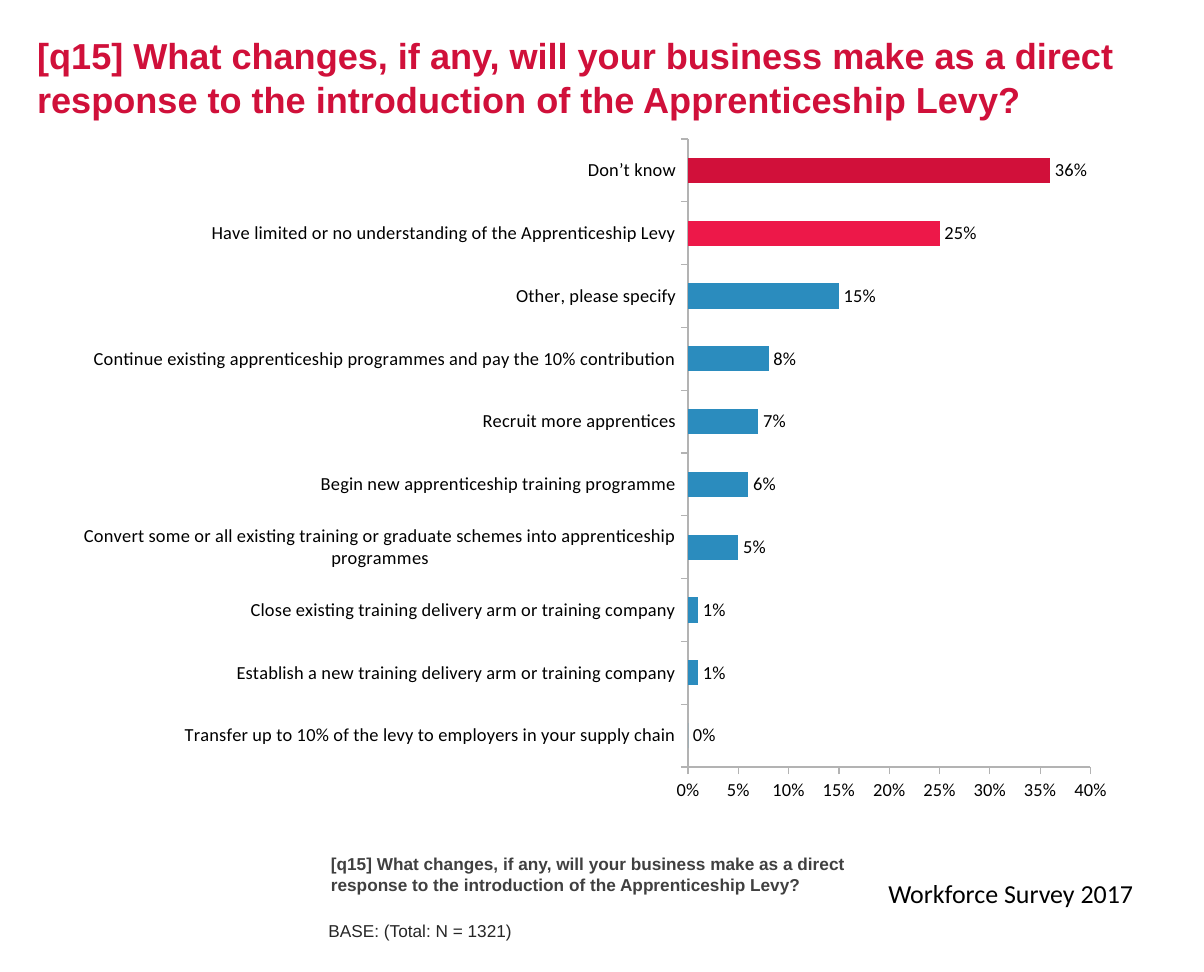
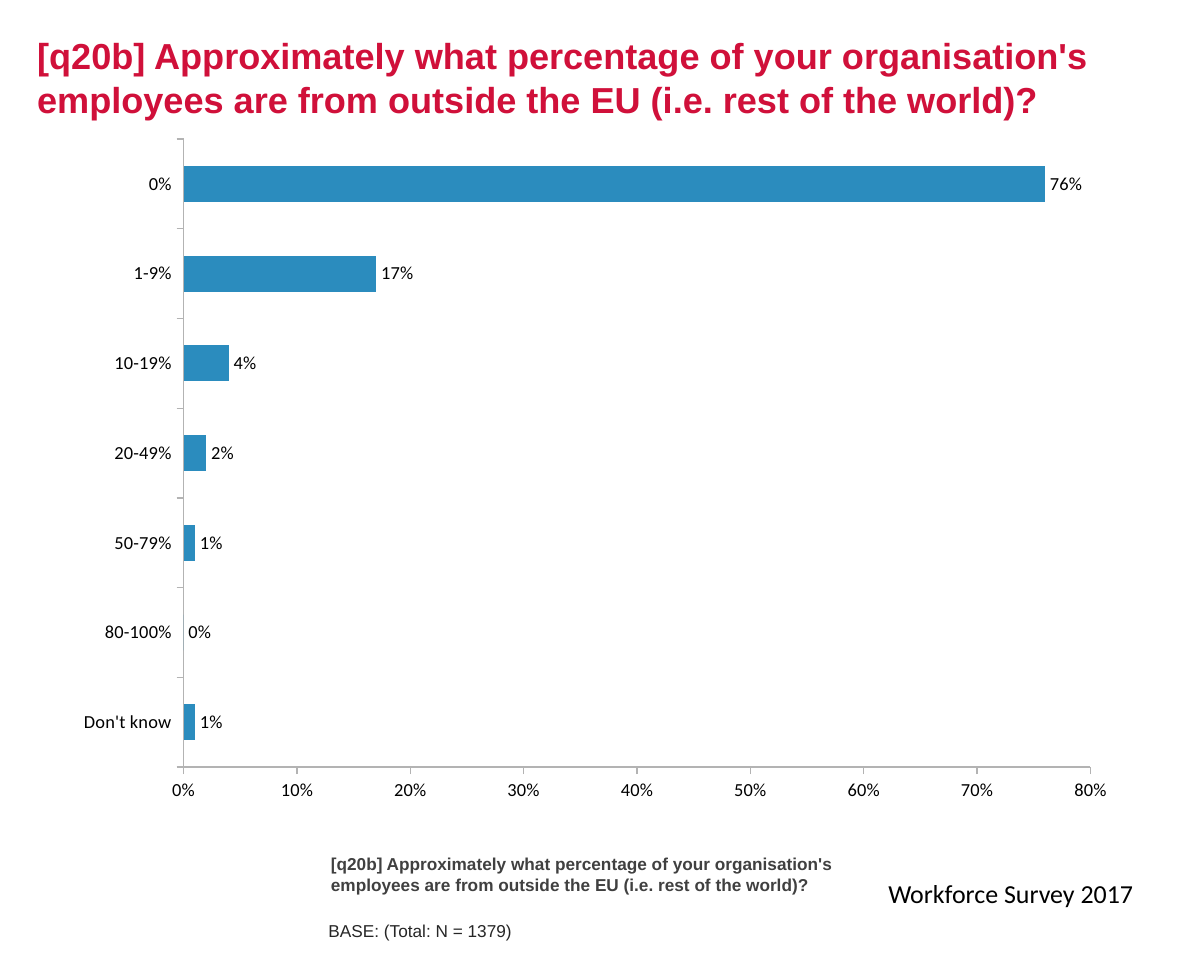
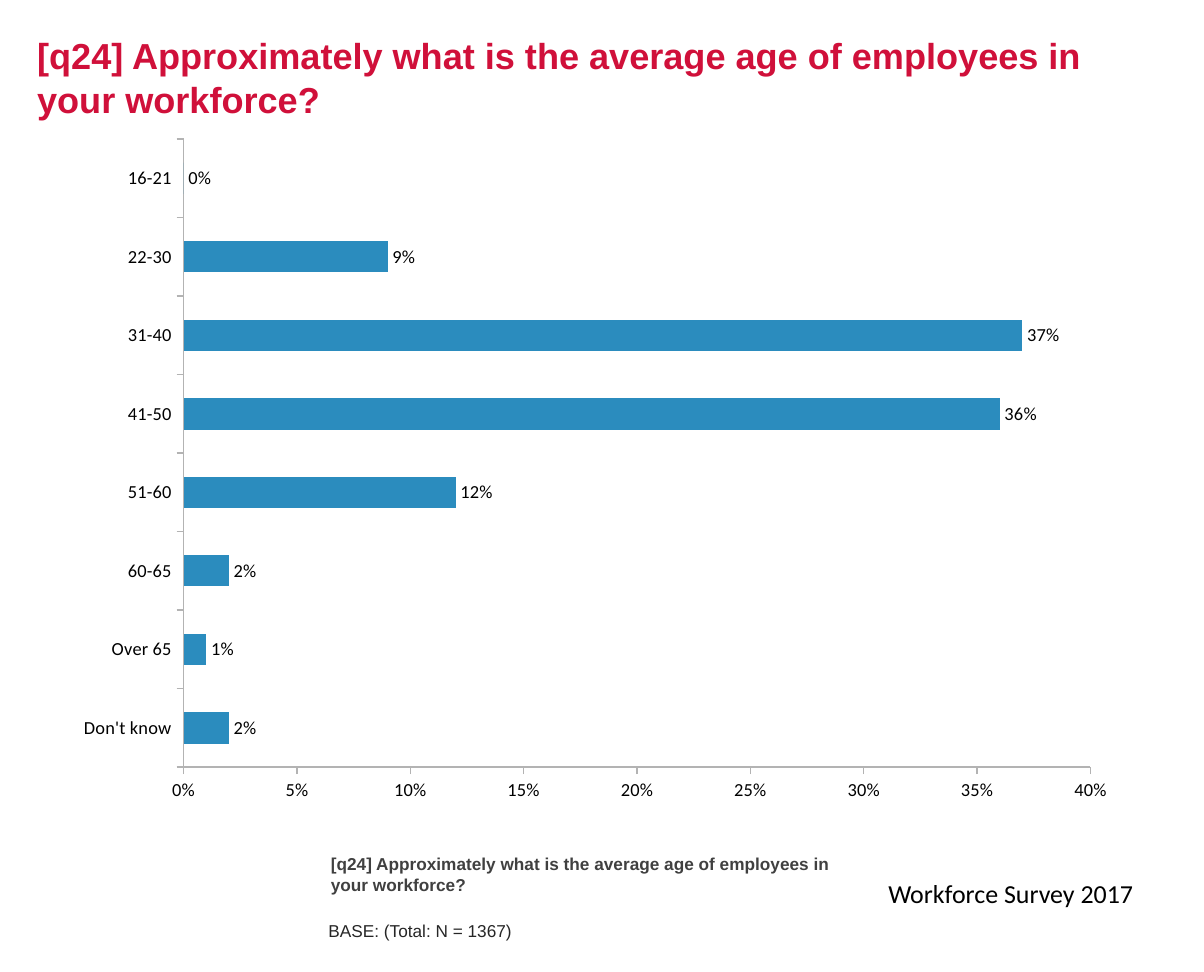
"""Builds three survey slides, each with one bar chart of answers."""
import pptx
import pptx.util
import pptx.chart.data
import pptx.dml.color
import pptx.enum.chart
import pptx.enum.text

Inches = pptx.util.Inches
Pt = pptx.util.Pt
RGBColor = pptx.dml.color.RGBColor
Anchor = pptx.enum.text.MSO_ANCHOR
Chart = pptx.enum.chart

RED = RGBColor(0xD0, 0x10, 0x3A)
CRIMSON = RGBColor(0xD1, 0x10, 0x3A)
ROSE = RGBColor(0xED, 0x18, 0x49)
BLUE = RGBColor(0x2B, 0x8C, 0xBE)
BLACK = RGBColor(0x00, 0x00, 0x00)
DARK = RGBColor(0x26, 0x26, 0x26)
SLATE = RGBColor(0x40, 0x40, 0x40)
GREY = RGBColor(0xB3, 0xB3, 0xB3)
WHITE = RGBColor(0xFF, 0xFF, 0xFF)

HEAD = "Arial"
BODY = "Calibri"
SURVEY = "Workforce Survey 2017"

LEVY = {
    "Transfer up to 10% of the levy to employers in your supply chain": 0,
    "Establish a new training delivery arm or training company": 0.01,
    "Close existing training delivery arm or training company": 0.01,
    "Convert some or all existing training or graduate schemes into apprenticeship programmes": 0.05,
    "Begin new apprenticeship training programme": 0.06,
    "Recruit more apprentices": 0.07,
    "Continue existing apprenticeship programmes and pay the 10% contribution": 0.08,
    "Other, please specify": 0.15,
    "Have limited or no understanding of the Apprenticeship Levy": 0.25,
    "Don’t know": 0.36,
}
ABROAD = {
    "Don't know": 0.01,
    "80-100%": 0,
    "50-79%": 0.01,
    "20-49%": 0.02,
    "10-19%": 0.04,
    "1-9%": 0.17,
    "0%": 0.76,
}
AGES = {
    "Don't know": 0.02,
    "Over 65": 0.01,
    "60-65": 0.02,
    "51-60": 0.12,
    "41-50": 0.36,
    "31-40": 0.37,
    "22-30": 0.09,
    "16-21": 0,
}


class Deck:
    """Holds the shared style and the current slide."""

    def __init__(self):
        self.show = pptx.Presentation()
        self.show.slide_width = Inches(10)
        self.show.slide_height = Inches(8.07)
        self.slide = None

    def start(self):
        self.slide = self.show.slides.add_slide(self.show.slide_layouts[6])
        fill = self.slide.background.fill
        fill.solid()
        fill.fore_color.rgb = WHITE

    def text(self, words, box, size, color, face=HEAD, bold=False, anchor=Anchor.BOTTOM):
        frame = self.slide.shapes.add_textbox(*map(Inches, box)).text_frame
        frame.word_wrap = True
        frame.vertical_anchor = anchor
        frame.text = words
        font = frame.paragraphs[0].runs[0].font
        font.name, font.size, font.bold = face, Pt(size), bold
        font.color.rgb = color

    def axis(self, axis):
        axis.has_major_gridlines = False
        axis.major_tick_mark = Chart.XL_TICK_MARK.OUTSIDE
        axis.minor_tick_mark = Chart.XL_TICK_MARK.NONE
        axis.format.line.color.rgb = GREY
        axis.format.line.width = Pt(0.75)

    def bars(self, shares, top, step, marks):
        data = pptx.chart.data.CategoryChartData(number_format="0%")
        data.categories = list(shares)
        data.add_series("Series 1", list(shares.values()))
        box = map(Inches, (0.52, 1.04, 8.85, 5.73))
        kind = Chart.XL_CHART_TYPE.BAR_CLUSTERED
        chart = self.slide.shapes.add_chart(kind, *box, data).chart
        chart.has_title = chart.has_legend = False
        chart.font.name, chart.font.size = BODY, Pt(11)
        chart.font.color.rgb = BLACK

        scale = chart.value_axis
        for axis in (chart.category_axis, scale):
            self.axis(axis)
        scale.minimum_scale, scale.maximum_scale = 0, top
        scale.major_unit = step
        scale.tick_labels.number_format = "0%"
        scale.tick_labels.number_format_is_linked = False

        plot = chart.plots[0]
        plot.vary_by_categories = False
        plot.gap_width = 150
        plot.has_data_labels = True
        labels = plot.data_labels
        labels.show_value = True
        labels.number_format = "0%"
        labels.number_format_is_linked = False
        labels.position = Chart.XL_LABEL_POSITION.OUTSIDE_END

        series = plot.series[0]
        series.invert_if_negative = False
        fills = [(series, BLUE)]
        fills += [(series.points[spot], color) for spot, color in marks.items()]
        for part, color in fills:
            part.format.fill.solid()
            part.format.fill.fore_color.rgb = color

    def page(self, query, base, shares, top, step, marks):
        self.start()
        self.text(query, (0.21, 0.2, 9.51, 0.88), 21.6, RED, bold=True, anchor=Anchor.MIDDLE)
        self.text(SURVEY, (7.28, 7.24, 2.43, 0.36), 15.5, BLACK, face=BODY, anchor=Anchor.TOP)
        self.text(query, (2.65, 7.11, 4.6, 0.37), 10.3, SLATE, bold=True)
        self.text(f"BASE: (Total: N = {base})", (2.63, 7.48, 4.6, 0.38), 10.3, DARK)
        self.bars(shares, top, step, marks)


def main():
    deck = Deck()
    deck.page(
        "[q15] What changes, if any, will your business make as a direct "
        "response to the introduction of the Apprenticeship Levy?",
        1321, LEVY, 0.4, 0.05, {8: ROSE, 9: CRIMSON})
    deck.page(
        "[q20b] Approximately what percentage of your organisation's "
        "employees are from outside the EU (i.e. rest of the world)?",
        1379, ABROAD, 0.8, 0.1, {})
    deck.page(
        "[q24] Approximately what is the average age of employees in your workforce?",
        1367, AGES, 0.4, 0.05, {})
    deck.show.save("out.pptx")


if __name__ == "__main__":
    main()
